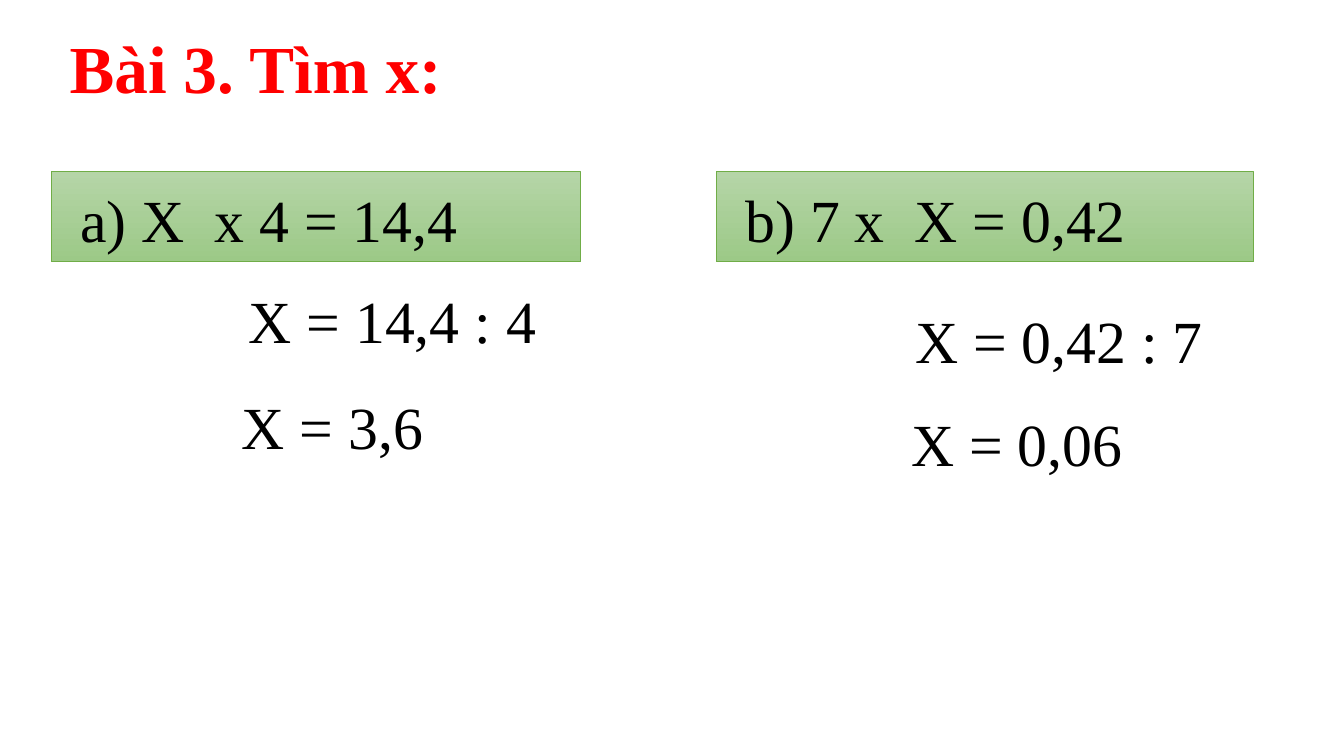
import pptx
import pptx.dml.color
import pptx.enum.shapes
import pptx.enum.text
import pptx.util

Inches = pptx.util.Inches
Pt = pptx.util.Pt
Align = pptx.enum.text.PP_ALIGN


def colour(value):
    return pptx.dml.color.RGBColor.from_string(value)


class LessonSlide:
    font = "Times New Roman"
    ink = "000000"
    red = "FF0000"
    border = "70AD47"
    gradient = ("B5D5A7", "9CC987")

    def __init__(self, deck):
        self.page = deck.slides.add_slide(deck.slide_layouts[6])

    def style(self, font, size, ink, bold=False):
        font.name = self.font
        font.size = Pt(size)
        font.bold = bold
        font.color.rgb = colour(ink)

    def prepare(self, box):
        frame = box.text_frame
        frame.word_wrap = True
        frame.auto_size = pptx.enum.text.MSO_AUTO_SIZE.SHAPE_TO_FIT_TEXT
        frame.vertical_anchor = pptx.enum.text.MSO_ANCHOR.TOP
        return frame.paragraphs[0]

    def text(self, words, left, top, width, height, size=32, ink=ink,
             bold=False, align=Align.CENTER):
        box = self.page.shapes.add_textbox(
            Inches(left), Inches(top), Inches(width), Inches(height))
        para = self.prepare(box)
        para.text = words
        para.alignment = align
        self.style(para.font, size, ink, bold)

    def exercise(self, words, left, top, width, height):
        box = self.page.shapes.add_shape(
            pptx.enum.shapes.MSO_SHAPE.RECTANGLE,
            Inches(left), Inches(top), Inches(width), Inches(height))
        box.shadow.inherit = False
        box.fill.gradient()
        box.fill.gradient_angle = 270
        for stop, (position, shade) in zip(
                box.fill.gradient_stops, enumerate(self.gradient)):
            stop.position = position
            stop.color.rgb = colour(shade)
        box.line.color.rgb = colour(self.border)
        box.line.width = Pt(0.5)
        para = self.prepare(box)
        para.alignment = Align.LEFT
        for piece, size in ((" ", 34), (words, 32)):
            span = para.add_run()
            span.text = piece
            self.style(span.font, size, self.ink)


def main():
    # Widescreen page, 16 to 9
    deck = pptx.Presentation()
    deck.slide_width = Inches(10)
    deck.slide_height = Inches(10 * 9 / 16)
    slide = LessonSlide(deck)

    # Exercise a
    slide.exercise("a) X  x 4 = 14,4", 0.38, 1.28, 3.94, 0.67)
    slide.text("X = 3,6", 1.08, 2.85, 2.79, 0.64)
    slide.text("X = 14,4 : 4", 0.96, 2.06, 3.92, 0.64)

    # Exercise b
    slide.exercise("b) 7 x  X = 0,42", 5.33, 1.28, 4, 0.67)
    slide.text("X = 0,42 : 7", 5.92, 2.21, 3.92, 0.64)
    slide.text("X = 0,06", 6.17, 2.98, 2.79, 0.64)

    # Heading
    slide.text("Bài 3. Tìm x:", 0.42, 0.15, 4.58, 1.01, size=36,
               ink=slide.red, bold=True, align=Align.LEFT)

    deck.save("out.pptx")


if __name__ == "__main__":
    main()
